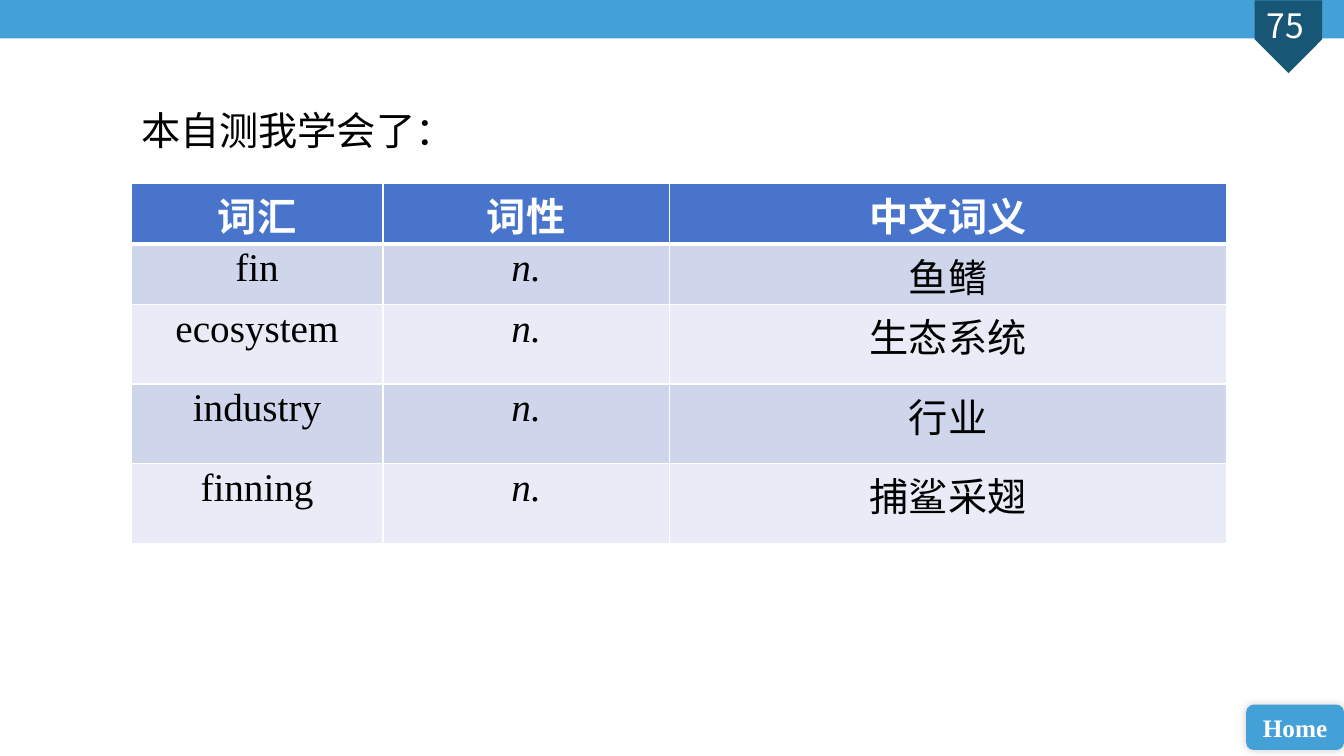
import pptx
import pptx.dml.color
import pptx.enum.shapes
import pptx.enum.text
import pptx.oxml
import pptx.oxml.ns
import pptx.util

SHAPES = pptx.enum.shapes.MSO_SHAPE
ALIGN = pptx.enum.text.PP_ALIGN
ANCHOR = pptx.enum.text.MSO_ANCHOR
NAMESPACE = pptx.oxml.ns.nsdecls("a")
SERIF = "Times New Roman"
CHINESE = "Noto Sans CJK SC"

COLOURS = {
    "bar": "43A1D8",
    "marker": "185675",
    "header": "4874CB",
    "odd": "CFD6EC",
    "even": "E9EBF6",
    "white": "FFFFFF",
    "black": "000000",
}


class WordSlide:
    """Holds the style and the slide; all lengths are percent of the slide's size."""

    def __init__(self, presentation):
        self.width = presentation.slide_width
        self.height = presentation.slide_height
        self.slide = presentation.slides.add_slide(presentation.slide_layouts[5])

    def across(self, share):
        return round(self.width * share / 100)

    def down(self, share):
        return round(self.height * share / 100)

    def box(self, left, top, width, height):
        return self.across(left), self.down(top), self.across(width), self.down(height)

    def colour(self, name):
        return pptx.dml.color.RGBColor.from_string(COLOURS[name])

    def fill(self, target, name):
        target.fill.solid()
        target.fill.fore_color.rgb = self.colour(name)

    def add_words(self, frame, text, size, colour, align=ALIGN.CENTER, **font):
        paragraph = frame.paragraphs[0]
        paragraph.alignment = align
        run = paragraph.add_run()
        run.text = text
        values = {"name": SERIF, "size": pptx.util.Pt(size), "bold": False} | font
        for key, value in values.items():
            setattr(run.font, key, value)
        run.font.color.rgb = self.colour(colour)
        run.font._element.append(
            pptx.oxml.parse_xml(f'<a:ea {NAMESPACE} typeface="{CHINESE}"/>'))

    def title(self, place, text, size):
        shape = self.slide.shapes.title
        values = zip(("left", "top", "width", "height"), self.box(*place))
        for key, value in values:
            setattr(shape, key, value)
        frame = shape.text_frame
        frame.auto_size = pptx.enum.text.MSO_AUTO_SIZE.NONE
        frame.word_wrap = True
        frame.vertical_anchor = ANCHOR.TOP
        self.add_words(frame, text, size, "black", ALIGN.LEFT, name="Calibri")

    def shape(self, kind, place, colour, rotation=0):
        shape = self.slide.shapes.add_shape(kind, *self.box(*place))
        shape.shadow.inherit = False
        shape.rotation = rotation
        self.fill(shape, colour)
        shape.line.fill.background()
        return shape

    def text(self, place, text, size, colour, **font):
        frame = self.slide.shapes.add_textbox(*self.box(*place)).text_frame
        frame.word_wrap = True
        self.add_words(frame, text, size, colour, **font)

    def button(self, place, text, size):
        shape = self.shape(SHAPES.ROUNDED_RECTANGLE, place, "bar")
        effects = shape._element.spPr.find(pptx.oxml.ns.qn("a:effectLst"))
        effects.append(pptx.oxml.parse_xml(
            f'<a:outerShdw {NAMESPACE} blurRad="{pptx.util.Pt(6)}" dist="0" dir="18900000">'
            f'<a:srgbClr val="{COLOURS["black"]}"><a:alpha val="20000"/></a:srgbClr>'
            '</a:outerShdw>'))
        shape.text_frame.vertical_anchor = ANCHOR.MIDDLE
        self.add_words(shape.text_frame, text, size, "white", bold=True)

    def borders(self, cell, widths):
        properties = cell._tc.get_or_add_tcPr()
        for index, (side, points) in enumerate(widths.items()):
            properties.insert(index, pptx.oxml.parse_xml(
                f'<a:ln{side} {NAMESPACE} w="{pptx.util.Pt(points)}"><a:solidFill>'
                f'<a:srgbClr val="{COLOURS["white"]}"/></a:solidFill></a:ln{side}>'))

    def table(self, left, top, columns, rows, content, size):
        place = self.box(left, top, sum(columns), sum(rows))
        table = self.slide.shapes.add_table(len(rows), len(columns), *place).table
        for column, share in zip(table.columns, columns):
            column.width = self.across(share)
        for row, share in zip(table.rows, rows):
            row.height = self.down(share)
        margins = {"margin_top": pptx.util.Inches(0.03), "margin_bottom": 0}
        for r, words in enumerate(content):
            header = r == 0
            for c, word in enumerate(words):
                cell = table.cell(r, c)
                for key, value in margins.items():
                    setattr(cell, key, value)
                self.fill(cell, "header" if header else "odd" if r % 2 else "even")
                self.borders(cell, {"L": 1, "R": 1, "T": 3 if r == 1 else 1,
                                    "B": 3 if header else 1})
                self.add_words(cell.text_frame, word, size, "white" if header else "black",
                               bold=header, italic=not header and c == 1)


def main():
    presentation = pptx.Presentation()
    presentation.slide_width = pptx.util.Inches(13.33)
    presentation.slide_height = pptx.util.Inches(7.5)
    page = WordSlide(presentation)

    # Top bar with the page marker
    page.shape(SHAPES.RECTANGLE, (0, 0, 100, 5.07), "bar")
    page.shape(SHAPES.PENTAGON, (93.17, 0.4, 5.4, 8.93), "marker", rotation=90)
    page.text((91.95, 0, 7.35, 6.67), "75", 24, "white", name=CHINESE)

    # Home button
    page.button((92.72, 93.2, 7.28, 6), "Home", 18)

    # Heading and word list
    page.title((9.75, 13.33, 29.03, 7.6), "本自测我学会了：", 28)
    meanings = {"fin": "鱼鳍", "ecosystem": "生态系统",
                "industry": "行业", "finning": "捕鲨采翅"}
    content = [("词汇", "词性", "中文词义")]
    content += [(word, "n.", meaning) for word, meaning in meanings.items()]
    page.table(9.75, 24.27, (18.75, 21.3, 41.48), [8] * 2 + [10.53] * 3, content, 28)

    presentation.save("out.pptx")


if __name__ == "__main__":
    main()
